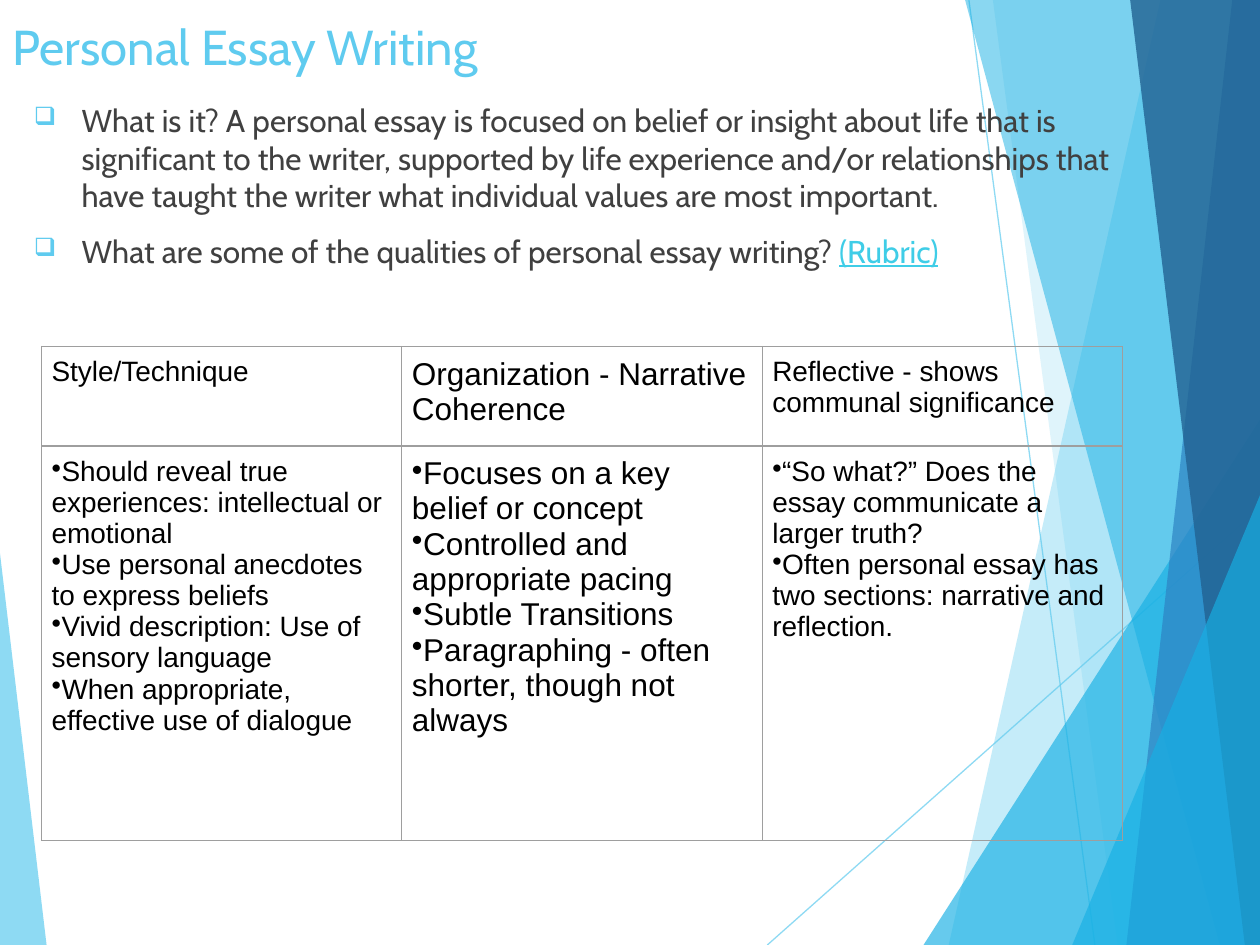
from dataclasses import dataclass
from lxml import etree
from pptx import Presentation
from pptx.dml.color import RGBColor
from pptx.enum.shapes import MSO_CONNECTOR, MSO_SHAPE
from pptx.enum.text import MSO_ANCHOR
from pptx.oxml.ns import qn
from pptx.util import Inches, Pt

STRAIGHT = MSO_CONNECTOR.STRAIGHT
TRIANGLE = MSO_SHAPE.ISOSCELES_TRIANGLE
TOP = MSO_ANCHOR.TOP

COLORS = {
    "sky": "5FCBEF", "cyan": "17B0E4", "blue": "2E83C3", "navy": "226292",
    "body": "404040", "link": "3FCDE7", "black": "000000", "border": "9E9E9E",
}
WIDTH, HEIGHT = 10, 7.5


@dataclass
class Ray:
    start: tuple[float, float]
    end: tuple[float, float]


@dataclass
class Band:
    """Full-height strip from a slanted left edge to the slide's right edge."""
    top_x: float
    bottom_x: float
    color: str
    opacity: int


@dataclass
class Wedge:
    """Triangle standing on the bottom edge, apex given as a share of its width."""
    left: float
    top: float
    width: float
    apex: float
    color: str
    opacity: int


@dataclass
class Column:
    heading: str
    points: list[str]
    size: int


RAYS = [Ray((7.69, 0), (8.69, HEIGHT)), Ray((WIDTH, 4.03), (6.09, HEIGHT))]
FACETS = [
    Band(9.21, 7.53, "sky", 36),
    Band(7.88, 8.87, "sky", 20),
    Wedge(7.33, 3.33, 2.67, 1, "cyan", 66),
    Band(7.66, 9.68, "cyan", 50),
    Band(9.78, 8.94, "blue", 70),
    Band(8.97, 9.88, "navy", 80),
    Wedge(8.51, 3.93, 1.49, 1, "cyan", 66),
    Wedge(0, 4.39, 0.37, 0, "sky", 70),
]
QUESTIONS = [
    [("What is it? A personal essay is focused on belief or insight about life that is "
      "significant to the writer, supported by life experience and/or relationships that "
      "have taught the writer what individual values are most important.", "body")],
    [("What are some of the qualities of personal essay writing? ", "body"),
     ("(Rubric)", "link")],
]
COLUMNS = [
    Column("Style/Technique", [
        "Should reveal true experiences: intellectual or emotional",
        "Use personal anecdotes to express beliefs",
        "Vivid description: Use of sensory language",
        "When appropriate, effective use of dialogue"], 16),
    Column("Organization - Narrative Coherence", [
        "Focuses on a key belief or concept",
        "Controlled and appropriate pacing",
        "Subtle Transitions",
        "Paragraphing - often shorter, though not always"], 18),
    Column("Reflective - shows communal significance", [
        "“So what?” Does the essay communicate a larger truth?",
        "Often personal essay has two sections: narrative and reflection."], 16),
]


def rgb(name: str) -> RGBColor:
    return RGBColor.from_string(COLORS[name])


def set_opacity(parent, percent: int) -> None:
    color = next(parent.iter(qn("a:srgbClr")))
    etree.SubElement(color, qn("a:alpha"), val=str(percent * 1000))


def set_font(font, name: str, size: int, color: str) -> None:
    font.name, font.size = name, Pt(size)
    font.color.rgb = rgb(color)


def add_bullet(para, char: str, indent: float = 0, color: str = "", percent: int = 100) -> None:
    props = para._p.get_or_add_pPr()
    props.set("marL", str(Inches(indent)))
    props.set("indent", str(-Inches(indent)))
    if color:
        holder = etree.SubElement(props, qn("a:buClr"))
        etree.SubElement(holder, qn("a:srgbClr"), val=COLORS[color])
    etree.SubElement(props, qn("a:buSzPct"), val=str(percent * 1000))
    etree.SubElement(props, qn("a:buChar"), char=char)


def draw_ray(page, ray: Ray) -> None:
    points = [Inches(value) for value in (*ray.start, *ray.end)]
    line = page.shapes.add_connector(STRAIGHT, *points)
    line.line.color.rgb, line.line.width = rgb("sky"), Pt(0.75)
    set_opacity(line._element.spPr, 70)
    etree.SubElement(line._element.spPr, qn("a:effectLst"))


def draw_facet(page, facet: Band | Wedge) -> None:
    if isinstance(facet, Band):
        outline = page.shapes.build_freeform(Inches(facet.top_x), 0)
        corners = [(WIDTH, 0), (WIDTH, HEIGHT), (facet.bottom_x, HEIGHT)]
        outline.add_line_segments([(Inches(x), Inches(y)) for x, y in corners])
        shape = outline.convert_to_shape()
    else:
        shape = page.shapes.add_shape(
            TRIANGLE, Inches(facet.left), Inches(facet.top),
            Inches(facet.width), Inches(HEIGHT - facet.top))
        shape.adjustments[0] = facet.apex
    shape.shadow.inherit = False
    shape.line.fill.background()
    shape.fill.solid()
    shape.fill.fore_color.rgb = rgb(facet.color)
    set_opacity(shape._element.spPr, facet.opacity)


def add_text_frame(page, left: float, top: float, width: float, height: float):
    box = page.shapes.add_textbox(Inches(left), Inches(top), Inches(width), Inches(height))
    box.text_frame.word_wrap = True
    box.text_frame.vertical_anchor = TOP
    return box.text_frame


def fill_cell(cell, lines: list[str], size: int, bulleted: bool) -> None:
    cell.margin_left = cell.margin_right = Inches(0.08)
    cell.margin_top = cell.margin_bottom = Inches(0.08)
    cell.text = "\n".join(lines)
    for para in cell.text_frame.paragraphs:
        if bulleted:
            add_bullet(para, "•")
        set_font(para.font, "Arial", size, "black")
    cell.fill.background()
    props = cell._tc.get_or_add_tcPr()
    for index, side in enumerate(("lnL", "lnR", "lnT", "lnB")):
        border = etree.Element(qn(f"a:{side}"), w=str(Pt(0.75)))
        fill = etree.SubElement(border, qn("a:solidFill"))
        etree.SubElement(fill, qn("a:srgbClr"), val=COLORS["border"])
        props.insert(index, border)


def main() -> None:
    deck = Presentation()
    deck.slide_width, deck.slide_height = Inches(WIDTH), Inches(HEIGHT)
    page = deck.slides.add_slide(deck.slide_layouts[6])

    # Background rays and facets
    for ray in RAYS:
        draw_ray(page, ray)
    for facet in FACETS:
        draw_facet(page, facet)

    # Title
    title = add_text_frame(page, 0, 0.08, 7.05, 0.67).paragraphs[0]
    title.text = "Personal Essay Writing"
    set_font(title.font, "Cabin", 28, "sky")

    # Questions
    frame = add_text_frame(page, 0.17, 0.75, 8.83, 2.38)
    for index, spans in enumerate(QUESTIONS):
        para = frame.add_paragraph() if index else frame.paragraphs[0]
        add_bullet(para, "❑", 0.38, "sky", 80)
        para.space_before = Pt(10)
        set_font(para.font, "Cabin", 18, "body")
        for text, color in spans:
            span = para.add_run()
            span.text = text
            if color == "link":
                span.font.color.rgb, span.font.underline = rgb(color), True

    # Table of qualities
    table = page.shapes.add_table(
        2, len(COLUMNS), Inches(0.33), Inches(2.75), Inches(8.58), Inches(3.92)).table
    table.first_row = table.horz_banding = False
    table.rows[0].height, table.rows[1].height = Inches(0.79), Inches(3.13)
    for index, column in enumerate(COLUMNS):
        table.columns[index].width = Inches(2.86)
        fill_cell(table.cell(0, index), [column.heading], column.size, False)
        fill_cell(table.cell(1, index), column.points, column.size, True)

    deck.save("out.pptx")


if __name__ == "__main__":
    main()
